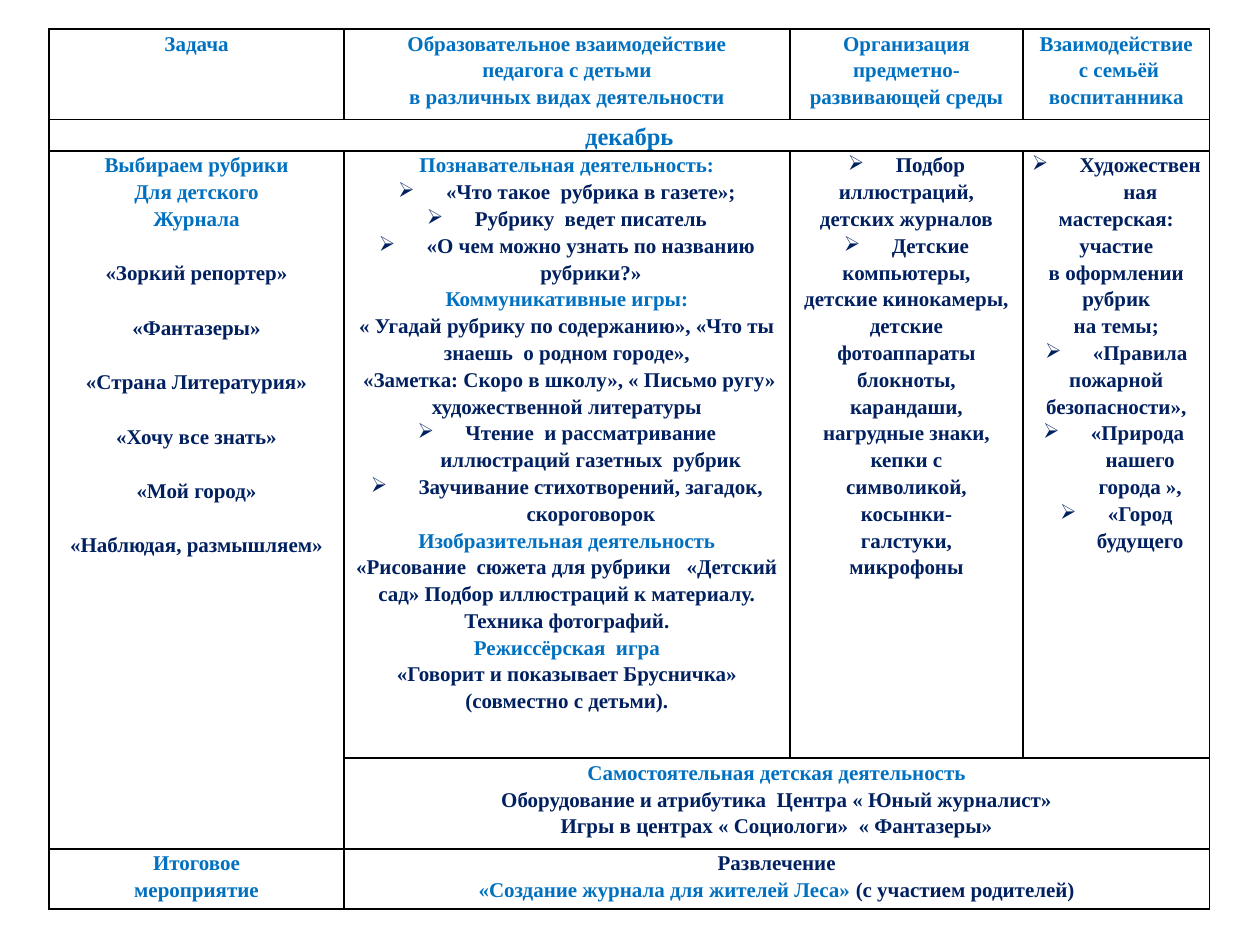
from dataclasses import dataclass

from lxml import etree
from pptx import Presentation
from pptx import util as u
from pptx.dml.color import RGBColor
from pptx.enum import text
from pptx.oxml.ns import qn


@dataclass(frozen=True)
class Theme:
    font: str = "Times New Roman"
    heading: str = "0070C0"
    body: str = "002060"
    border: str = "000000"
    size: int = 12
    month_size: int = 14
    line_spacing: float = 1.15
    topic_gap: float = 15.75
    border_width: float = 1
    bullet: str = "➢"
    bullet_indent: float = 0.38
    side_margin: float = 0.05


THEME = Theme()


@dataclass
class Line:
    spans: list
    size: int = THEME.size
    bullet: bool = False
    gap: float = 0


def heading(*lines, size=THEME.size):
    return [Line([(line, THEME.heading)], size=size) for line in lines]


def body(*lines, gap=0):
    return [Line([(line, THEME.body)], gap=gap) for line in lines]


def bullets(*lines):
    return [Line([(line, THEME.body)], bullet=True) for line in lines]


class PlanPage:
    def __init__(self, deck, theme):
        self.theme = theme
        self.page = deck.slides.add_slide(deck.slide_layouts[6])

    def table(self, left, top, widths, heights):
        frame = self.page.shapes.add_table(
            len(heights), len(widths), u.Inches(left), u.Inches(top),
            u.Inches(sum(widths)), u.Inches(sum(heights)))
        table = frame.table
        table.first_row = table.horz_banding = False
        for column, width in zip(table.columns, widths):
            column.width = u.Inches(width)
        for row, height in zip(table.rows, heights):
            row.height = u.Inches(height)
        for cell in table.iter_cells():
            self.frame_cell(cell)
        return table

    def frame_cell(self, cell):
        properties = cell._tc.get_or_add_tcPr()
        for edge in ("a:lnL", "a:lnR", "a:lnT", "a:lnB"):
            line = etree.SubElement(properties, qn(edge),
                                    w=str(u.Pt(self.theme.border_width)))
            fill = etree.SubElement(line, qn("a:solidFill"))
            etree.SubElement(fill, qn("a:srgbClr"), val=self.theme.border)
        cell.fill.background()
        cell.margin_left = cell.margin_right = u.Inches(self.theme.side_margin)
        cell.margin_top = cell.margin_bottom = 0

    def fill_cell(self, cell, lines):
        frame = cell.text_frame
        for index, line in enumerate(lines):
            paragraph = frame.add_paragraph() if index else frame.paragraphs[0]
            self.write_line(paragraph, line)

    def write_line(self, paragraph, line):
        paragraph.alignment = text.PP_ALIGN.CENTER
        paragraph.line_spacing = self.theme.line_spacing
        if line.gap:
            paragraph.space_before = u.Pt(line.gap)
        if line.bullet:
            self.add_bullet(paragraph)
        font = paragraph.font
        font.name, font.size, font.bold = self.theme.font, u.Pt(line.size), True
        font.color.rgb = RGBColor.from_string(line.spans[0][1])
        for words, color in line.spans:
            span = paragraph.add_run()
            span.text = words
            if len(line.spans) > 1:
                span.font.color.rgb = RGBColor.from_string(color)

    def add_bullet(self, paragraph):
        properties = paragraph._p.get_or_add_pPr()
        indent = u.Inches(self.theme.bullet_indent)
        properties.set("marL", str(indent))
        properties.set("indent", str(-indent))
        etree.SubElement(properties, qn("a:buChar"), char=self.theme.bullet)


TASKS = heading("Выбираем рубрики", "Для детского", "Журнала") + body(
    "«Зоркий репортер»", "«Фантазеры»", "«Страна Литературия»",
    "«Хочу все знать»", "«Мой город»", "«Наблюдая, размышляем»",
    gap=THEME.topic_gap)

ACTIVITIES = (
    heading("Познавательная деятельность:")
    + bullets("«Что такое  рубрика в газете»;", "Рубрику  ведет писатель",
              "«О чем можно узнать по названию рубрики?»")
    + heading("Коммуникативные игры:")
    + body("« Угадай рубрику по содержанию», «Что ты знаешь  о родном городе»,",
           " «Заметка: Скоро в школу», « Письмо ругу»",
           "художественной литературы")
    + bullets("Чтение  и рассматривание иллюстраций газетных  рубрик",
              "Заучивание стихотворений, загадок, скороговорок")
    + heading("Изобразительная деятельность")
    + body("«Рисование  сюжета для рубрики   «Детский сад» "
           "Подбор иллюстраций к материалу.", "Техника фотографий.")
    + heading("Режиссёрская  игра")
    + body("«Говорит и показывает Брусничка»", "(совместно с детьми)."))

ENVIRONMENT = (
    bullets("Подбор") + body("иллюстраций,", "детских журналов")
    + bullets("Детские")
    + body("компьютеры,", "детские кинокамеры,", "детские", "фотоаппараты",
           "блокноты,", "карандаши,", "нагрудные знаки,", "кепки с",
           "символикой,", "косынки-", "галстуки,", "микрофоны"))

FAMILY = (
    bullets("Художественная")
    + body("мастерская:", "участие", "в оформлении", "рубрик", "на темы;")
    + bullets("«Правила") + body("пожарной", "безопасности»,")
    + bullets("«Природа  нашего города »,", "«Город будущего"))

FINALE = body("Развлечение") + [Line([
    ("«Создание журнала для жителей Леса» ", THEME.heading),
    ("(с участием родителей)", THEME.body)])]

CELLS = {
    (0, 0): heading("Задача"),
    (0, 1): heading("Образовательное взаимодействие", "педагога с детьми",
                    "в различных видах деятельности"),
    (0, 2): heading("Организация предметно-развивающей среды"),
    (0, 3): heading("Взаимодействие", " с семьёй воспитанника"),
    (1, 0): heading("декабрь", size=THEME.month_size),
    (2, 0): TASKS,
    (2, 1): ACTIVITIES,
    (2, 2): ENVIRONMENT,
    (2, 3): FAMILY,
    (3, 1): heading("Самостоятельная детская деятельность")
    + body("Оборудование и атрибутика  Центра « Юный журналист»",
           "Игры в центрах « Социологи»  « Фантазеры»"),
    (4, 0): heading("Итоговое", "мероприятие"),
    (4, 1): FINALE,
}
MERGES = [((1, 0), (1, 3)), ((2, 0), (3, 0)), ((3, 1), (3, 3)), ((4, 1), (4, 3))]


def main():
    deck = Presentation()
    deck.slide_width, deck.slide_height = u.Inches(10), u.Inches(7.5)
    plan = PlanPage(deck, THEME)
    table = plan.table(0.39, 0.23, widths=[2.34, 3.54, 1.85, 1.48],
                       heights=[0.72, 0.24, 4.82, 0.72, 0.48])
    for first, last in MERGES:
        table.cell(*first).merge(table.cell(*last))
    for place, lines in CELLS.items():
        plan.fill_cell(table.cell(*place), lines)
    deck.save("out.pptx")


if __name__ == "__main__":
    main()
